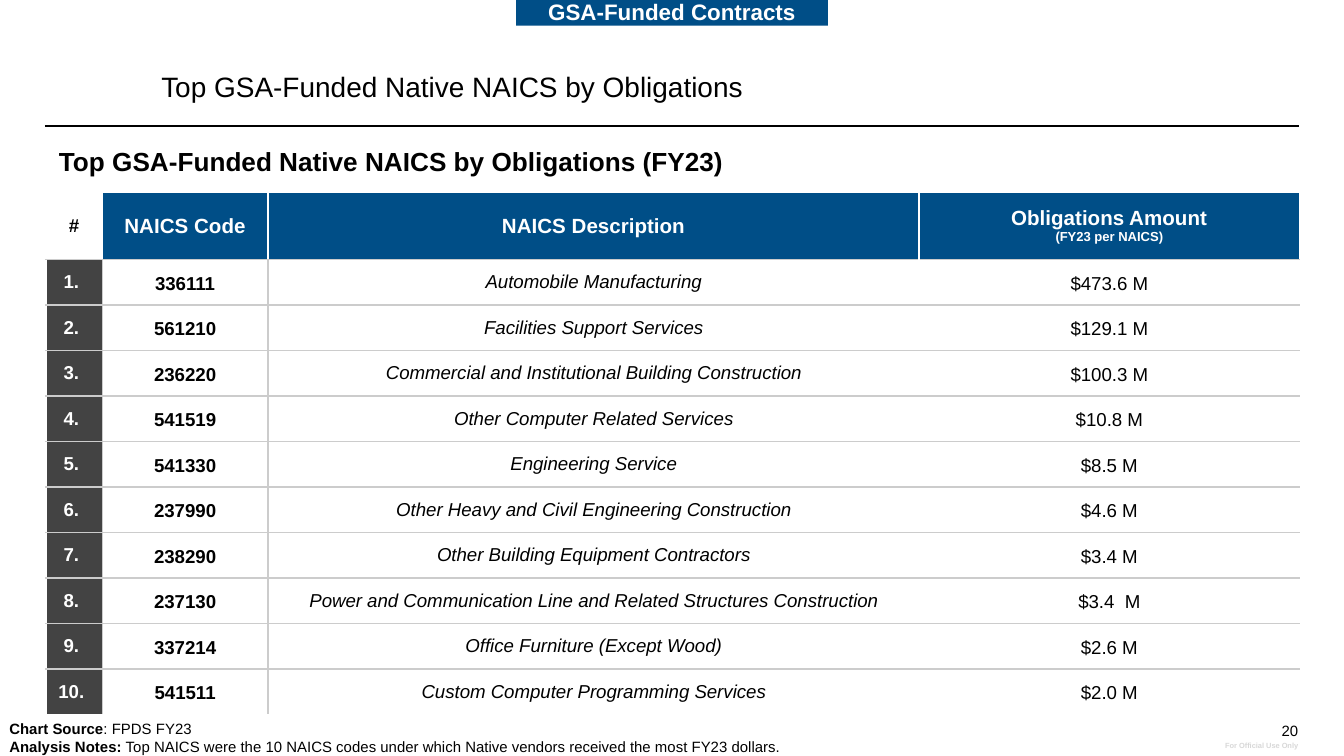
from dataclasses import dataclass

from lxml import etree
from pptx import Presentation
from pptx.dml.color import RGBColor
from pptx.enum.shapes import MSO_CONNECTOR, MSO_SHAPE
from pptx.enum.text import MSO_ANCHOR, MSO_AUTO_SIZE, PP_ALIGN
from pptx.oxml.ns import qn
from pptx.util import Pt

LEFT, CENTER, RIGHT = PP_ALIGN.LEFT, PP_ALIGN.CENTER, PP_ALIGN.RIGHT
TOP, MIDDLE, BOTTOM = MSO_ANCHOR.TOP, MSO_ANCHOR.MIDDLE, MSO_ANCHOR.BOTTOM
NO_FIT = MSO_AUTO_SIZE.NONE
RECT = MSO_SHAPE.RECTANGLE
STRAIGHT = MSO_CONNECTOR.STRAIGHT

BLACK = RGBColor(0x00, 0x00, 0x00)
WHITE = RGBColor(0xFF, 0xFF, 0xFF)
BLUE = RGBColor(0x00, 0x4E, 0x87)
CHARCOAL = RGBColor(0x43, 0x43, 0x43)
RULE_GRAY = RGBColor(0xCC, 0xCC, 0xCC)
PALE_GRAY = RGBColor(0xD8, 0xD8, 0xD8)
FONT = "Arial"

TITLE = "Top GSA-Funded Native NAICS by Obligations"
COL_WIDTHS = (30.24, 88.9, 348.8, 203.8)
HEADER_HEIGHT, ROW_HEIGHT = 36, 24.4


@dataclass(frozen=True)
class Run:
    text: str
    size: float
    color: RGBColor = BLACK
    bold: bool = False
    italic: bool = False


@dataclass(frozen=True)
class TextBox:
    left: float
    top: float
    width: float
    height: float
    paragraphs: tuple[tuple[Run, ...], ...]
    align: PP_ALIGN = LEFT
    anchor: MSO_ANCHOR = TOP
    inset: float = 0


@dataclass(frozen=True)
class CellStyle:
    fill: RGBColor | None
    borders: dict[str, RGBColor]
    margins: tuple[float, float] = (0, 0)
    spacing: float = 1.0


@dataclass(frozen=True)
class Naics:
    code: str
    description: str
    amount: str


HEADERS = (
    ((Run("#", 10, BLACK, True),),),
    ((Run("NAICS Code", 11, WHITE, True),),),
    ((Run("NAICS Description", 11, WHITE, True),),),
    ((Run("Obligations Amount", 11, WHITE, True),),
     (Run("(FY23 per NAICS)", 7, WHITE, True),)),
)
HEADER_STYLES = (
    CellStyle(None, {"B": RULE_GRAY}, (7.2, 7.2)),
    CellStyle(BLUE, {"R": WHITE, "B": RULE_GRAY}, (7.2, 7.2)),
    CellStyle(BLUE, {"L": WHITE, "R": WHITE, "B": RULE_GRAY}, (7.2, 7.2)),
    CellStyle(BLUE, {"L": WHITE, "B": RULE_GRAY}, (7.2, 7.2)),
)
BODY_STYLES = (
    CellStyle(CHARCOAL, dict.fromkeys("RTB", RULE_GRAY)),
    CellStyle(None, dict.fromkeys("LRTB", RULE_GRAY), (2, 1.5), 1.15),
    CellStyle(None, dict.fromkeys("LTB", RULE_GRAY)),
    CellStyle(None, dict.fromkeys("TB", RULE_GRAY), (2, 1.5), 1.15),
)
ROWS = (
    Naics("336111", "Automobile Manufacturing", "$473.6 M"),
    Naics("561210", "Facilities Support Services", "$129.1 M"),
    Naics("236220", "Commercial and Institutional Building Construction", "$100.3 M"),
    Naics("541519", "Other Computer Related Services", "$10.8 M"),
    Naics("541330", "Engineering Service", "$8.5 M"),
    Naics("237990", "Other Heavy and Civil Engineering Construction", "$4.6 M"),
    Naics("238290", "Other Building Equipment Contractors", "$3.4 M"),
    Naics("237130", "Power and Communication Line and Related Structures Construction",
          "$3.4  M"),
    Naics("337214", "Office Furniture (Except Wood)", "$2.6 M"),
    Naics("541511", "Custom Computer Programming Services", "$2.0 M"),
)
TEXT_BOXES = (
    TextBox(656.6, 386.6, 38.9, 15.8, ((Run("20", 8),),), RIGHT),
    TextBox(644.4, 391, 51.1, 10.8,
            ((Run("For Official Use Only", 4, PALE_GRAY, True),),), RIGHT, BOTTOM),
    TextBox(24.5, 70.6, 460.8, 31.7,
            ((Run(TITLE + " (FY23)", 14, bold=True),),), inset=7.2),
    TextBox(0, 369.4, 667.4, 40.3, (
        (Run("Chart Source", 8, bold=True), Run(": FPDS FY23", 8)),
        (Run("Analysis Notes:", 8, bold=True),
         Run(" Top NAICS were the 10 NAICS codes under which Native vendors "
             "received the most FY23 dollars.", 8)),
    ), anchor=BOTTOM, inset=5),
)


def write_text(tf, paragraphs: tuple[tuple[Run, ...], ...], align: PP_ALIGN,
               spacing: float = 1.0) -> None:
    for i, runs in enumerate(paragraphs):
        p = tf.paragraphs[0] if i == 0 else tf.add_paragraph()
        p.alignment = align
        p.line_spacing = spacing
        for run in runs:
            r = p.add_run()
            r.text = run.text
            r.font.name = FONT
            r.font.size = Pt(run.size)
            r.font.bold = run.bold
            r.font.italic = run.italic
            r.font.color.rgb = run.color


def set_margins(target, x: float, y: float) -> None:
    target.margin_left = target.margin_right = Pt(x)
    target.margin_top = target.margin_bottom = Pt(y)


def format_frame(tf, anchor: MSO_ANCHOR, x: float, y: float) -> None:
    tf.word_wrap = True
    tf.auto_size = NO_FIT
    tf.vertical_anchor = anchor
    set_margins(tf, x, y)


def add_text_box(slide, box: TextBox) -> None:
    sp = slide.shapes.add_textbox(Pt(box.left), Pt(box.top), Pt(box.width), Pt(box.height))
    format_frame(sp.text_frame, box.anchor, box.inset, box.inset)
    write_text(sp.text_frame, box.paragraphs, box.align)


def add_title(slide) -> None:
    sp = slide.shapes.title
    sp.left, sp.top, sp.width, sp.height = Pt(81.4), Pt(13.7), Pt(614.9), Pt(44.6)
    format_frame(sp.text_frame, BOTTOM, 5, 3)
    write_text(sp.text_frame, ((Run(TITLE, 15),),), LEFT, 0.9)


def add_banner(slide) -> None:
    sp = slide.shapes.add_shape(RECT, Pt(276.5), Pt(-1.4), Pt(167), Pt(15.1))
    sp.shadow.inherit = False
    sp.fill.solid()
    sp.fill.fore_color.rgb = BLUE
    sp.line.fill.background()
    format_frame(sp.text_frame, MIDDLE, 7.2, 7.2)
    write_text(sp.text_frame, ((Run("GSA-Funded Contracts", 12, WHITE, True),),), CENTER)


def add_title_rule(slide) -> None:
    line = slide.shapes.add_connector(STRAIGHT, Pt(24), Pt(67.5), Pt(696), Pt(67.5))
    line.line.color.rgb = BLACK
    line.line.width = Pt(1.5)
    etree.SubElement(line._element.spPr, qn("a:effectLst"))


def fill_cell(cell, paragraphs: tuple[tuple[Run, ...], ...], style: CellStyle) -> None:
    tc_pr = cell._tc.get_or_add_tcPr()
    for side, color in style.borders.items():
        ln = etree.SubElement(tc_pr, qn(f"a:ln{side}"), w=str(Pt(0.75)))
        solid = etree.SubElement(ln, qn("a:solidFill"))
        etree.SubElement(solid, qn("a:srgbClr"), val=str(color))
    if style.fill is None:
        cell.fill.background()
    else:
        cell.fill.solid()
        cell.fill.fore_color.rgb = style.fill
    cell.vertical_anchor = MIDDLE
    set_margins(cell, *style.margins)
    write_text(cell.text_frame, paragraphs, CENTER, style.spacing)


def add_naics_table(slide) -> None:
    height = HEADER_HEIGHT + ROW_HEIGHT * len(ROWS)
    frame = slide.shapes.add_table(len(ROWS) + 1, len(COL_WIDTHS), Pt(24.5), Pt(103),
                                   Pt(sum(COL_WIDTHS)), Pt(height))
    table = frame.table
    table.first_row = table.horz_banding = False
    for column, width in zip(table.columns, COL_WIDTHS):
        column.width = Pt(width)
    for i, row in enumerate(table.rows):
        row.height = Pt(ROW_HEIGHT if i else HEADER_HEIGHT)
    for col, (paragraphs, style) in enumerate(zip(HEADERS, HEADER_STYLES)):
        fill_cell(table.cell(0, col), paragraphs, style)
    for n, item in enumerate(ROWS, 1):
        runs = (Run(f"{n}. ", 10, WHITE, True), Run(item.code, 10, bold=True),
                Run(item.description, 10, italic=True), Run(item.amount, 10))
        for col, (run, style) in enumerate(zip(runs, BODY_STYLES)):
            if n == len(ROWS):
                borders = {**style.borders, "B": WHITE}
                style = CellStyle(style.fill, borders, style.margins, style.spacing)
            fill_cell(table.cell(n, col), ((run,),), style)


def main() -> None:
    prs = Presentation()
    prs.slide_width, prs.slide_height = Pt(720), Pt(405)
    slide = prs.slides.add_slide(prs.slide_layouts[5])
    add_title_rule(slide)
    add_banner(slide)
    add_title(slide)
    add_naics_table(slide)
    for box in TEXT_BOXES:
        add_text_box(slide, box)
    prs.save("out.pptx")


if __name__ == "__main__":
    main()
